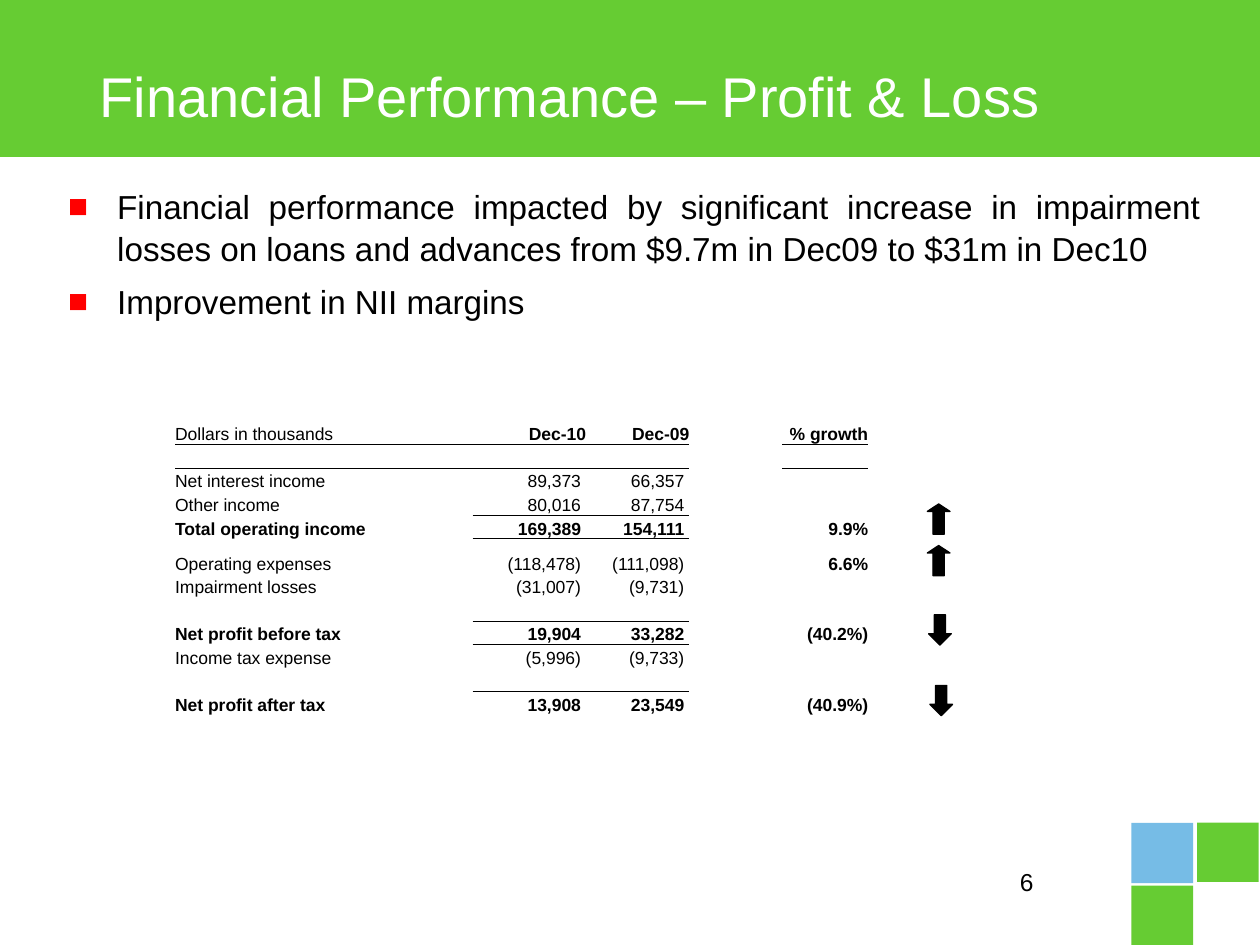
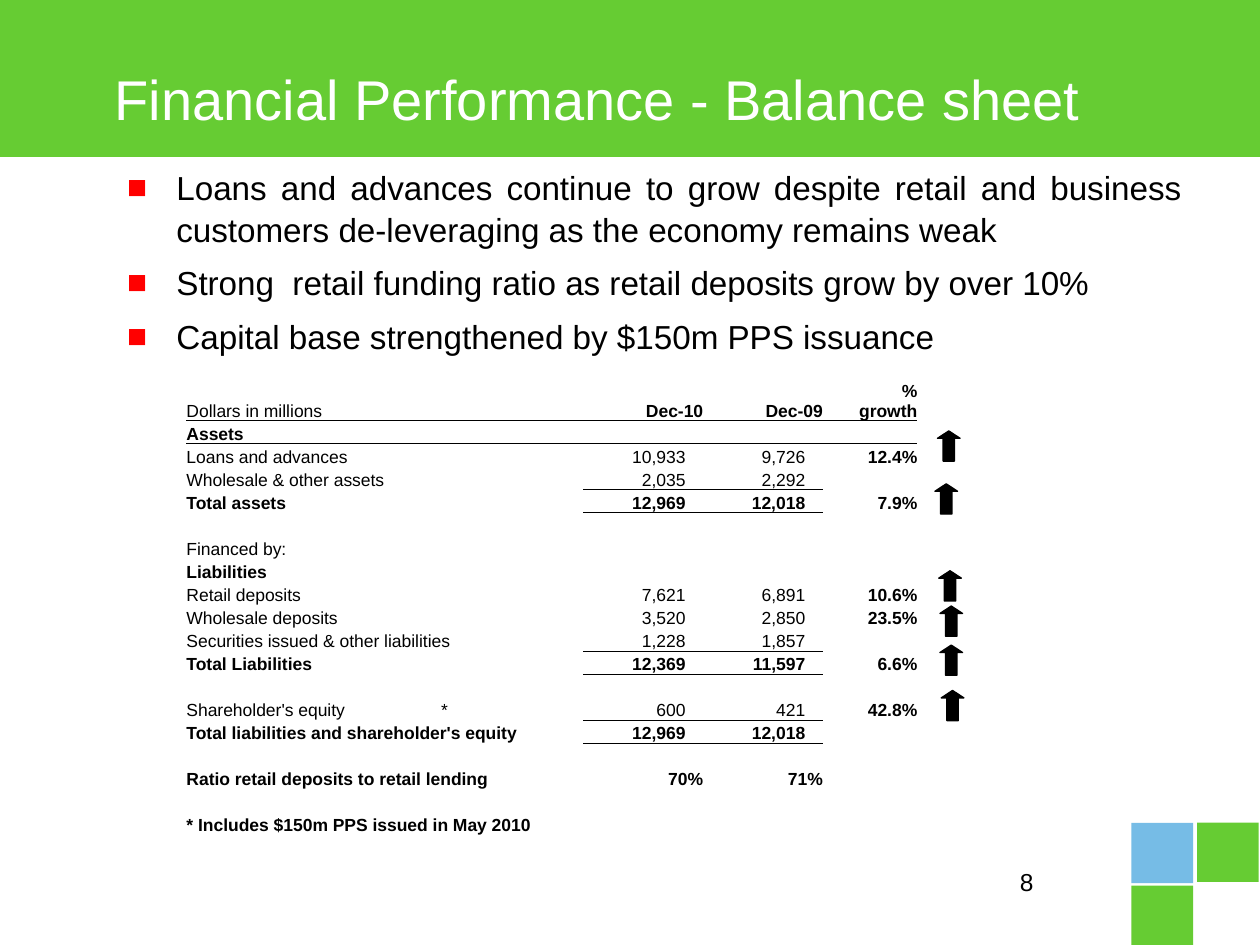
"""Build two financial performance slides: profit and loss, and balance sheet."""
from pptx import Presentation
from pptx.dml.color import RGBColor
from pptx.enum.shapes import MSO_SHAPE
from pptx.enum.text import MSO_ANCHOR, MSO_AUTO_SIZE, PP_ALIGN
from pptx.oxml.xmlchemy import OxmlElement
from pptx.util import Inches, Pt

RECTANGLE = MSO_SHAPE.RECTANGLE
UP, DOWN = MSO_SHAPE.UP_ARROW, MSO_SHAPE.DOWN_ARROW
LEFT, RIGHT, JUSTIFY = PP_ALIGN.LEFT, PP_ALIGN.RIGHT, PP_ALIGN.JUSTIFY
TOP, BOTTOM = MSO_ANCHOR.TOP, MSO_ANCHOR.BOTTOM
NO_AUTOFIT = MSO_AUTO_SIZE.NONE

FONT = "Arial"
COLORS = {"green": "66CC33", "blue": "76BCE6", "bullet": "FF0000",
          "text": "000000", "title": "FFFFFF"}
PLAIN_TABLE_STYLE = "{2D5ABB26-0587-4C30-8999-92F81FD0307C}"
BAND = (0, 0, 10, 1.24)
CORNER_SQUARES = [
    ("green", (8.98, 7.03, 0.49, 0.47)),
    ("green", (9.5, 6.53, 0.49, 0.47)),
    ("blue", (8.98, 6.53, 0.49, 0.48)),
]
PAGE_NUMBER_BOX = (6.22, 6.83, 2.08, 0.5)
ARROW_SIZE = (0.18, 0.24)
ARROW_HEAD = {UP: 0.33, DOWN: 0.5}
BULLET_INDENT = 0.39
ASTERISK_TAB = 2.02
GROWTH_COLUMN = 4
AMOUNT_COLUMNS = (1, 2)

EMPTY_ROW = ("", "", "", "")
HEADINGS = ("Dec-10", "Dec-09", "% growth")

SLIDES = [
    {
        "title": "Financial Performance – Profit & Loss",
        "title_box": (0.72, 0.39, 8.5, 0.85),
        "bullets": [
            "Financial performance impacted by significant increase in impairment "
            "losses on loans and advances from $9.7m in Dec09 to $31m in Dec10",
            "Improvement in NII margins",
        ],
        "bullets_box": (0.44, 1.41, 9.19, 1.17),
        "page": "6",
        "arrows": [(DOWN, 7.37, 4.88), (DOWN, 7.38, 5.44),
                   (UP, 7.36, 4.33), (UP, 7.36, 4)],
        "table": {
            "box": (1.39, 3.16, 5.5, 2.52),
            "columns": (2.36, 0.9, 0.82, 0.74, 0.68),
            "special_heights": {0: 0.37, 5: 0.28},
            "amount_margin": 0.04,
            "bold_rows": {4, 8, 11},
            "header_rule": (0, 1, 2, 4),
            "subtotal_rules": (3, 7, 10),
            "rows": [
                ("Dollars in thousands", *HEADINGS),
                EMPTY_ROW,
                ("Net interest income", "89,373", "66,357", ""),
                ("Other income", "80,016", "87,754", ""),
                ("Total operating income", "169,389", "154,111", "9.9%"),
                ("Operating expenses", "(118,478)", "(111,098)", "6.6%"),
                ("Impairment losses", "(31,007)", "(9,731)", ""),
                EMPTY_ROW,
                ("Net profit before tax", "19,904", "33,282", "(40.2%)"),
                ("Income tax expense", "(5,996)", "(9,733)", ""),
                EMPTY_ROW,
                ("Net profit after tax", "13,908", "23,549", "(40.9%)"),
            ],
        },
    },
    {
        "title": "Financial Performance - Balance sheet",
        "title_box": (0.84, 0.41, 8.93, 0.75),
        "bullets": [
            "Loans and advances continue to grow despite retail and business "
            "customers de-leveraging as the economy remains weak",
            "Strong  retail funding ratio as retail deposits grow by over 10%",
            "Capital base strengthened by $150m PPS issuance",
        ],
        "bullets_box": (0.91, 1.26, 8.57, 2.47),
        "page": "8",
        "arrows": [(UP, 7.44, 3.42), (UP, 7.42, 3.84), (UP, 7.45, 4.53),
                   (UP, 7.46, 4.81), (UP, 7.46, 5.12), (UP, 7.47, 5.48)],
        "table": {
            "box": (1.48, 2.98, 5.79, 3.65),
            "columns": (3.15, 0.95, 0.95, 0.14, 0.61),
            "special_heights": {0: 0.36},
            "amount_margin": 0.14,
            "bold_rows": {1, 4, 7, 11, 14, 16, 18},
            "header_rule": range(5),
            "subtotal_rules": (3, 10, 13),
            "rows": [
                ("Dollars in millions", *HEADINGS),
                ("Assets", "", "", ""),
                ("Loans and advances", "10,933", "9,726", "12.4%"),
                ("Wholesale & other assets", "2,035", "2,292", ""),
                ("Total assets", "12,969", "12,018", "7.9%"),
                EMPTY_ROW,
                ("Financed by:", "", "", ""),
                ("Liabilities", "", "", ""),
                ("Retail deposits", "7,621", "6,891", "10.6%"),
                ("Wholesale deposits", "3,520", "2,850", "23.5%"),
                ("Securities issued & other liabilities", "1,228", "1,857", ""),
                ("Total Liabilities", "12,369", "11,597", "6.6%"),
                EMPTY_ROW,
                ("Shareholder's equity\t*", "600", "421", "42.8%"),
                ("Total liabilities and shareholder's equity", "12,969", "12,018", ""),
                EMPTY_ROW,
                ("Ratio retail deposits to retail lending", "70%", "71%", ""),
                EMPTY_ROW,
                ("* Includes $150m PPS issued in May 2010", "", "", ""),
            ],
        },
    },
]


def rgb(name):
    return RGBColor.from_string(COLORS[name])


def inches(values):
    return [Inches(value) for value in values]


def add_child(parent, tag, **attributes):
    child = OxmlElement(tag)
    for name, value in attributes.items():
        child.set(name, str(value))
    parent.append(child)
    return child


def style_paragraph(paragraph, size, alignment, color="text", bold=False):
    paragraph.alignment = alignment
    font = paragraph.font
    font.name, font.size, font.bold = FONT, Pt(size), bold
    font.color.rgb = rgb(color)


def place_placeholder(placeholder, box):
    placeholder.left, placeholder.top, placeholder.width, placeholder.height = inches(box)
    frame = placeholder.text_frame
    frame.word_wrap = True
    frame.auto_size = NO_AUTOFIT
    frame.vertical_anchor = TOP
    return frame


def add_filled_shape(slide, kind, box, color, outlined=False):
    shape = slide.shapes.add_shape(kind, *inches(box))
    shape.shadow.inherit = False
    shape.fill.solid()
    shape.fill.fore_color.rgb = rgb(color)
    if outlined:
        shape.line.color.rgb = rgb(color)
        shape.line.width = Pt(0.75)
    else:
        shape.line.fill.background()
    return shape


def add_frame(slide, page):
    title = slide.shapes.title
    band = add_filled_shape(slide, RECTANGLE, BAND, "green", outlined=True)
    title.element.addprevious(band.element)
    for color, box in CORNER_SQUARES:
        square = add_filled_shape(slide, RECTANGLE, box, color)
        title.element.addprevious(square.element)
    frame = slide.shapes.add_textbox(*inches(PAGE_NUMBER_BOX)).text_frame
    frame.word_wrap = True
    frame.text = page
    style_paragraph(frame.paragraphs[0], 14, RIGHT)


def fill_title(slide, text, box):
    frame = place_placeholder(slide.shapes.title, box)
    frame.margin_left, frame.margin_top = Inches(0.07), Inches(0.1)
    frame.text = text
    style_paragraph(frame.paragraphs[0], 32, LEFT, "title")


def fill_bullets(slide, bullets, box):
    frame = place_placeholder(slide.placeholders[1], box)
    frame.text = "\n".join(bullets)
    for paragraph in frame.paragraphs:
        properties = paragraph._p.get_or_add_pPr()
        properties.set("marL", str(Inches(BULLET_INDENT)))
        properties.set("indent", str(-Inches(BULLET_INDENT)))
        bullet_color = add_child(properties, "a:buClr")
        add_child(bullet_color, "a:srgbClr", val=COLORS["bullet"])
        add_child(properties, "a:buFont", typeface=FONT)
        add_child(properties, "a:buChar", char="■")
        paragraph.line_spacing = 1.05
        paragraph.space_before = Pt(0)
        paragraph.space_after = Pt(6.65)
        style_paragraph(paragraph, 19, JUSTIFY)


def add_border(cell, tag):
    line = OxmlElement(tag)
    line.set("w", str(Pt(0.5)))
    fill = add_child(line, "a:solidFill")
    add_child(fill, "a:srgbClr", val=COLORS["text"])
    cell._tc.get_or_add_tcPr().insert(0, line)


def rule_below(table, row, columns):
    for column in columns:
        add_border(table.cell(row, column), "a:lnB")
        add_border(table.cell(row + 1, column), "a:lnT")


def fill_cell(cell, text, alignment, bold, margin_right):
    cell.fill.background()
    cell.vertical_anchor = BOTTOM
    cell.margin_left = cell.margin_top = cell.margin_bottom = 0
    cell.margin_right = Inches(margin_right)
    cell.text = text
    paragraph = cell.text_frame.paragraphs[0]
    if "\t" in text:
        tabs = add_child(paragraph._p.get_or_add_pPr(), "a:tabLst")
        add_child(tabs, "a:tab", pos=Inches(ASTERISK_TAB), algn="l")
    style_paragraph(paragraph, 10, alignment, bold=bold)
    if not text:
        add_child(paragraph._p, "a:endParaRPr", sz=1000)


def add_statement(slide, statement):
    rows, columns = statement["rows"], statement["columns"]
    special_heights = statement["special_heights"]
    table = slide.shapes.add_table(
        len(rows), len(columns), *inches(statement["box"])).table
    table.first_row = table.horz_banding = False
    table._tbl.tblPr[0].text = PLAIN_TABLE_STYLE
    for column, width in zip(table.columns, columns):
        column.width = Inches(width)
    free_height = statement["box"][3] - sum(special_heights.values())
    row_height = free_height / (len(rows) - len(special_heights))

    for row, (label, current, previous, growth) in enumerate(rows):
        table.rows[row].height = Inches(special_heights.get(row, row_height))
        for column, text in enumerate((label, current, previous, "", growth)):
            is_heading = row == 0 and column > 0
            is_amount = column in AMOUNT_COLUMNS and row > 0 and "%" not in text
            bold = is_heading or row in statement["bold_rows"] or column == GROWTH_COLUMN
            fill_cell(table.cell(row, column), text, RIGHT if column else LEFT, bold,
                      statement["amount_margin"] if is_amount else 0)

    rule_below(table, 0, statement["header_rule"])
    for row in statement["subtotal_rules"]:
        rule_below(table, row, AMOUNT_COLUMNS)


def add_arrows(slide, arrows):
    for kind, left, top in arrows:
        arrow = add_filled_shape(slide, kind, (left, top, *ARROW_SIZE), "text", outlined=True)
        arrow.adjustments[0] = 0.5
        arrow.adjustments[1] = ARROW_HEAD[kind]


def main():
    presentation = Presentation()
    presentation.slide_width, presentation.slide_height = Inches(10), Inches(7.5)
    for content in SLIDES:
        slide = presentation.slides.add_slide(presentation.slide_layouts[1])
        add_frame(slide, content["page"])
        fill_title(slide, content["title"], content["title_box"])
        fill_bullets(slide, content["bullets"], content["bullets_box"])
        add_arrows(slide, content["arrows"])
        add_statement(slide, content["table"])
    presentation.save("out.pptx")


if __name__ == "__main__":
    main()
